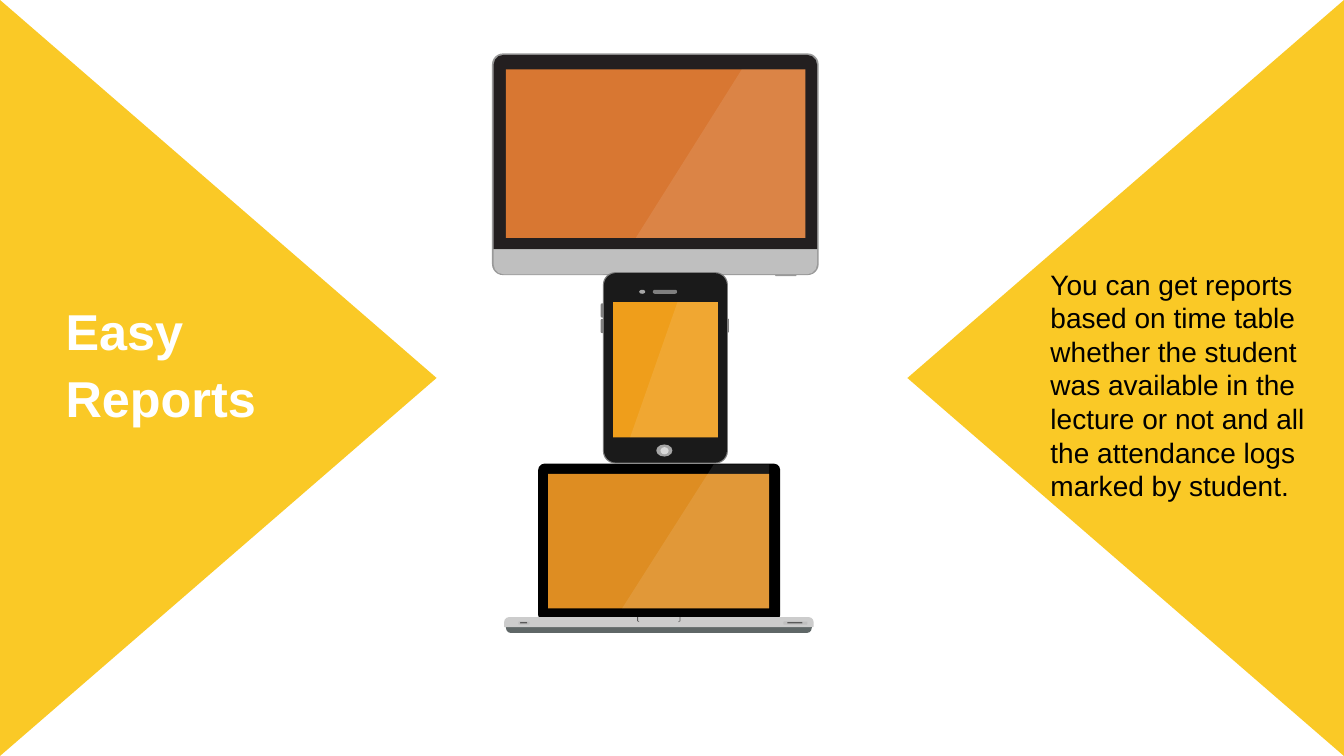
from lxml.etree import SubElement
from pptx import Presentation
from pptx.dml.color import RGBColor
from pptx.enum.shapes import MSO_SHAPE as Shape
from pptx.enum.text import MSO_ANCHOR as Anchor, MSO_AUTO_SIZE as AutoSize, PP_ALIGN as Align
from pptx.oxml.ns import qn
from pptx.util import Inches, Pt

WIDTH, HEIGHT = 13.33, 7.5

YELLOW = RGBColor(0xFA, 0xC9, 0x26)
WHITE = RGBColor(0xFF, 0xFF, 0xFF)
BLACK = RGBColor(0, 0, 0)
MONITOR_SCREEN = RGBColor(0xD8, 0x77, 0x32)
PHONE_SCREEN = RGBColor(0xEF, 0x9E, 0x1B)
LAPTOP_SCREEN = RGBColor(0xDE, 0x8D, 0x22)
BEZEL = RGBColor(0x23, 0x1F, 0x20)
PHONE_BODY = RGBColor(0x1A, 0x1A, 0x1A)
UNDERSIDE = RGBColor(0x5F, 0x67, 0x67)
DARK_GREY = RGBColor(0x59, 0x59, 0x59)
MID_GREY = RGBColor(0x80, 0x80, 0x80)
EDGE_GREY = RGBColor(0x99, 0x99, 0x99)
BUTTON_GREY = RGBColor(0xA6, 0xA6, 0xA6)
SILVER = RGBColor(0xBF, 0xBF, 0xBF)
BASE_GREY = RGBColor(0xCC, 0xCC, 0xCC)
LIGHT_GREY = RGBColor(0xD9, 0xD9, 0xD9)


def within(box, share):
    """Turn percentages of a box into inches."""
    left, top, width, height = box
    x, y, w, h = share
    return (left + width * x / 100, top + height * y / 100,
            width * w / 100, height * h / 100)


def paint(shape, color):
    shape.shadow.inherit = False
    shape.fill.solid()
    shape.fill.fore_color.rgb = color
    shape.line.fill.background()


def add_part(page, box, share, color, kind=Shape.RECTANGLE, corners=()):
    area = within(box, share)
    part = page.shapes.add_shape(kind, *map(Inches, area))
    for index, corner in enumerate(corners):
        part.adjustments[index] = corner
    paint(part, color)
    return area


def add_outline(page, box, points, color):
    """Draw a closed polygon whose points are percentages of the box."""
    corners = [tuple(map(Inches, within(box, (x, y, 0, 0))[:2])) for x, y in points]
    builder = page.shapes.build_freeform(*corners[0])
    builder.add_line_segments(corners[1:])
    outline = builder.convert_to_shape()
    paint(outline, color)
    return outline


def add_screen(page, box, share, color, gloss_top, gloss_bottom, gloss_start=0):
    """Draw a screen with a see-through reflection on its right side."""
    screen = add_part(page, box, share, color)
    gloss = add_outline(page, screen, [(gloss_top, gloss_start), (100, gloss_start),
                                       (100, 100), (gloss_bottom, 100)], WHITE)
    tint = gloss.fill._xPr.find(qn("a:solidFill"))[0]
    SubElement(tint, qn("a:alpha"), val="10000")


def add_monitor(page, box):
    add_part(page, box, (86.7, 98, 6.5, 2.5), EDGE_GREY, Shape.ROUNDED_RECTANGLE)
    add_part(page, box, (0, 0, 100, 100), EDGE_GREY, Shape.ROUNDED_RECTANGLE, [0.05])
    add_part(page, box, (0.5, 0.7, 99, 87.5), BEZEL, Shape.ROUND_2_SAME_RECTANGLE, [0.05, 0])
    add_part(page, box, (0.5, 88.4, 99, 11.2), SILVER, Shape.ROUND_2_SAME_RECTANGLE, [0, 0.4])
    add_screen(page, box, (4.2, 7.2, 91.7, 76), MONITOR_SCREEN, 78.8, 43.4)


def add_phone(page, box):
    # Side buttons
    for x, y in [(-1.8, 16.3), (-1.8, 24.4), (97.2, 24.2)]:
        add_part(page, box, (x, y, 3.6, 7.4), MID_GREY, Shape.ROUNDED_RECTANGLE, [0.3])
    # Body and screen
    add_part(page, box, (0, 0, 100, 100), MID_GREY, Shape.ROUNDED_RECTANGLE, [0.1])
    add_part(page, box, (0.8, 0.5, 98.4, 99), PHONE_BODY, Shape.ROUNDED_RECTANGLE, [0.1])
    add_screen(page, box, (8.1, 15.6, 83.9, 70.7), PHONE_SCREEN, 61.5, 16.3)
    # Home button, speaker and camera
    add_part(page, box, (42.7, 90, 12.9, 6.3), BUTTON_GREY, Shape.OVAL)
    add_part(page, box, (46, 91.4, 6.5, 3.7), LIGHT_GREY, Shape.OVAL)
    add_part(page, box, (39.9, 9.2, 19.4, 2.1), MID_GREY, Shape.ROUNDED_RECTANGLE, [0.5])
    add_part(page, box, (29, 9.2, 4.8, 2.1), BUTTON_GREY, Shape.OVAL)


def add_laptop(page, box):
    # Underside, lid and base
    add_part(page, box, (0.6, 94, 98.8, 6), UNDERSIDE, Shape.ROUND_2_SAME_RECTANGLE, [0, 0.5])
    add_part(page, box, (11, 0, 78.2, 93), BLACK, Shape.ROUNDED_RECTANGLE, [0.04])
    add_screen(page, box, (14.2, 6, 71.4, 79.5), LAPTOP_SCREEN, 75, 33.5, -7)
    add_part(page, box, (0, 90.6, 100, 6), BASE_GREY, Shape.ROUND_2_SAME_RECTANGLE, [0.5, 0.1])
    # Opening notch, mirrored about its middle
    hook = [(-7, 0), (-7, 2.4), (-6.2, 3), (-6.7, 2.2), (-6.7, 0)]
    for side in (1, -1):
        add_outline(page, box, [(50 + side * x, 90.6 + y) for x, y in hook], DARK_GREY)
    # Ports
    for x, width in [(4.6, 3.6), (90.2, 7.8)]:
        add_part(page, box, (x, 93.2, width, 1.8), SILVER, Shape.ROUNDED_RECTANGLE, [0.28])
        add_part(page, box, (x + width / 6, 93.6, width * 0.62, 0.8), DARK_GREY,
                 Shape.ROUNDED_RECTANGLE, [0.28])


def add_side_triangle(page, center_x, depth, rotation):
    """Place a page-high triangle whose base lies on a side of the slide."""
    triangle = page.shapes.add_shape(
        Shape.ISOSCELES_TRIANGLE, Inches(center_x - HEIGHT / 2),
        Inches((HEIGHT - depth) / 2), Inches(HEIGHT), Inches(depth))
    triangle.rotation = rotation
    paint(triangle, YELLOW)


def format_text(holder, text, size, color, bold=False, spacing=1.0):
    frame = holder.text_frame
    frame.text = text
    frame.word_wrap = True
    frame.auto_size = AutoSize.NONE
    frame.vertical_anchor = Anchor.TOP
    para = frame.paragraphs[0]
    para.alignment = Align.LEFT
    para.line_spacing = spacing
    font = para.runs[0].font
    font.name, font.size, font.bold = "Arial", Pt(size), bold
    font.color.rgb = color


def add_title(page, box):
    title = page.shapes.title
    title.left, title.top, title.width, title.height = map(Inches, box)
    format_text(title, "Easy Reports", 36, WHITE, bold=True, spacing=1.1)
    # Bring the title in front of the triangle
    title.element.getparent().append(title.element)


def add_description(page, box):
    description = page.shapes.add_textbox(*map(Inches, box))
    format_text(description, "You can get reports based on time table whether the student "
                "was available in the lecture or not and all the attendance logs "
                "marked by student.", 20, BLACK)


def build_reports_page(deck):
    page = deck.slides.add_slide(deck.slide_layouts[5])
    depth = 4.33
    add_side_triangle(page, depth / 2, depth, 90)
    add_side_triangle(page, WIDTH - depth / 2, depth, 270)
    add_monitor(page, (4.88, 0.53, 3.24, 2.2))
    add_laptop(page, (5, 4.6, 3.07, 1.68))
    add_phone(page, (5.98, 2.7, 1.24, 1.9))
    add_title(page, (0.55, 2.87, 2.95, 1.38))
    add_description(page, (10.32, 2.6, 2.81, 2.46))


def main():
    deck = Presentation()
    deck.slide_width, deck.slide_height = Inches(WIDTH), Inches(HEIGHT)
    build_reports_page(deck)
    deck.save("out.pptx")


if __name__ == "__main__":
    main()
